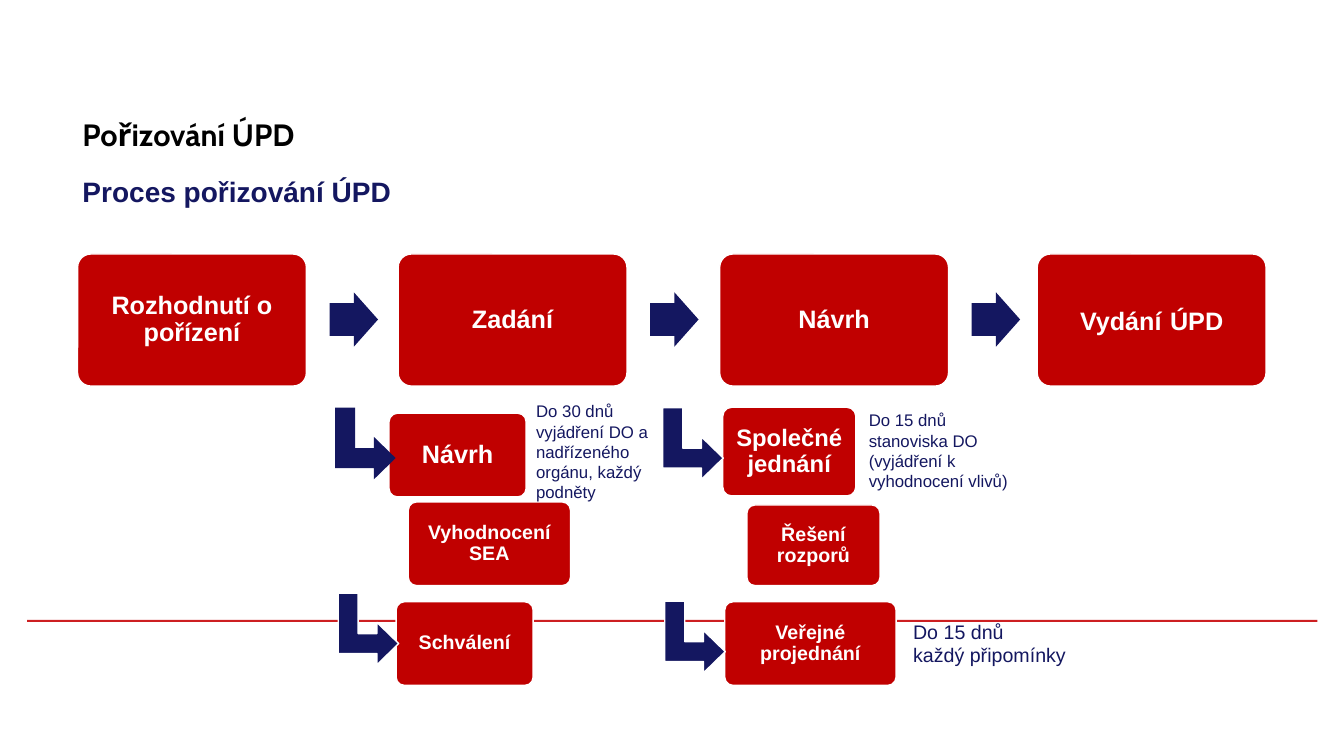
import pptx
import pptx.util
import pptx.dml.color
import pptx.enum.shapes
import pptx.enum.text

RED = pptx.dml.color.RGBColor(0xC0, 0x00, 0x00)
RULE_RED = pptx.dml.color.RGBColor(0xCD, 0x1F, 0x21)
NAVY = pptx.dml.color.RGBColor(0x14, 0x17, 0x60)
WHITE = pptx.dml.color.RGBColor(0xFF, 0xFF, 0xFF)
BLACK = pptx.dml.color.RGBColor(0x00, 0x00, 0x00)

SHAPE = pptx.enum.shapes.MSO_SHAPE
ANCHOR = pptx.enum.text.MSO_ANCHOR
CELL = pptx.util.Inches(0.1)
COLS, ROWS = 133.33, 75

STAGE_LEFTS = (7.7, 39.5, 71.4, 102.9)
STAGE_TOP, STAGE_W, STAGE_H = 25.2, 22.7, 13.1

ZADANI = {
    "steps": [
        ((-0.9, 15.8, 13.6, 8.3), "Návrh", 18),
        ((-0.2, 34.5, 13.6, 8.3), "Schválení", 14),
        ((1.0, 24.6, 16.1, 8.3), "Vyhodnocení SEA", 14),
    ],
    "bends": [((-6.8, 15.8), False), ((-6.5, 34.2), True)],
    "notes": [
        ((12.7, 14.1, 16.1, 11.1),
         ["Do 30 dnů vyjádření DO a nadřízeného orgánu, každý podněty"], 12),
    ],
}
NAVRH = {
    "steps": [
        ((0.3, 15.2, 13.2, 8.8), "Společné jednání", 17),
        ((0.5, 34.5, 17.0, 8.3), "Veřejné projednání", 14),
        ((2.7, 24.9, 13.2, 8.0), "Řešení rozporů", 14),
    ],
    "bends": [((-6.2, 15.8), True), ((-6.0, 35.0), True)],
    "notes": [
        ((13.8, 15.0, 16.1, 9.1),
         ["Do 15 dnů stanoviska DO (vyjádření k vyhodnocení vlivů)"], 12),
        ((18.2, 35.8, 18.5, 5.7), ["Do 15 dnů", "každý připomínky"], 14),
    ],
}


def cells(box):
    return [round(v * CELL) for v in box]


def style_run(r, size, color, bold=False, font="Arial"):
    r.font.name = font
    r.font.size = pptx.util.Pt(size)
    r.font.bold = bold
    r.font.color.rgb = color


def add_filled(slide, kind, box, color, outlined=False):
    sp = slide.shapes.add_shape(kind, *cells(box))
    sp.shadow.inherit = False
    sp.fill.solid()
    sp.fill.fore_color.rgb = color
    if outlined:
        sp.line.color.rgb = WHITE
        sp.line.width = pptx.util.Pt(1)
    else:
        sp.line.fill.background()
    return sp


def add_text(slide, box, lines, size, color, bold=False, font="Arial", anchor=ANCHOR.TOP):
    tf = slide.shapes.add_textbox(*cells(box)).text_frame
    tf.word_wrap = True
    tf.vertical_anchor = anchor
    tf.text = "\n".join(lines)
    for p in tf.paragraphs:
        for r in p.runs:
            style_run(r, size, color, bold, font)


def add_card(slide, box, text, size):
    sp = add_filled(slide, SHAPE.ROUNDED_RECTANGLE, box, RED, True)
    sp.adjustments[0] = 0.1
    tf = sp.text_frame
    tf.word_wrap = True
    tf.vertical_anchor = ANCHOR.MIDDLE
    margin = pptx.util.Inches(0.08)
    tf.margin_left = tf.margin_right = tf.margin_top = tf.margin_bottom = margin
    p = tf.paragraphs[0]
    p.text = text
    p.alignment = pptx.enum.text.PP_ALIGN.CENTER
    p.line_spacing = 0.9
    style_run(p.runs[0], size, WHITE, True)
    return p


def add_next_arrow(slide, box):
    left, top, _, _ = box
    sp = add_filled(slide, SHAPE.RIGHT_ARROW, (left + 25, top + 3.8, 4.8, 5.4), NAVY)
    sp.adjustments[0] = 0.6
    sp.adjustments[1] = 0.5


def add_bend(slide, left, top, outlined):
    sp = add_filled(slide, SHAPE.BENT_UP_ARROW, (left, top, 7.1, 6), NAVY, outlined)
    sp.rotation = 90
    for i, share in enumerate((0.33, 0.35, 0.36)):
        sp.adjustments[i] = share


def add_header(slide, box):
    left, top, width, height = box
    add_text(slide, (left, top, width, 9.8), ["Pořizování ÚPD"], 22, BLACK, True,
             "Cabin", ANCHOR.MIDDLE)
    add_text(slide, (left, top + 8.4, width, height - 8.4), ["Proces pořizování ÚPD"],
             20, NAVY, True)


def add_main_row(slide, boxes):
    for box, name in zip(boxes, ("Rozhodnutí o pořízení", "Zadání", "Návrh")):
        add_card(slide, box, name, 18)
        add_next_arrow(slide, box)
    p = add_card(slide, boxes[-1], "Vydání", 18)
    for text, size, bold, font in ((" ", 23, False, "Open Sans"), ("ÚPD", 18, True, "Arial")):
        r = p.add_run()
        r.text = text
        style_run(r, size, WHITE, bold, font)


def add_details(slide, box, details):
    left, top, _, _ = box
    for (x, y, w, h), text, size in details["steps"]:
        add_card(slide, (left + x, top + y, w, h), text, size)
    for (x, y), outlined in details["bends"]:
        add_bend(slide, left + x, top + y, outlined)
    for (x, y, w, h), lines, size in details["notes"]:
        add_text(slide, (left + x, top + y, w, h), lines, size, NAVY)


def main():
    prs = pptx.Presentation()
    prs.slide_width, prs.slide_height = cells((COLS, ROWS))
    slide = prs.slides.add_slide(prs.slide_layouts[6])
    stages = [(left, STAGE_TOP, STAGE_W, STAGE_H) for left in STAGE_LEFTS]
    add_filled(slide, SHAPE.RECTANGLE, (2.7, 61.5, 128, 0.2), RULE_RED)
    add_main_row(slide, stages)
    add_header(slide, (7.2, 8.4, 115, 12.8))
    add_details(slide, stages[1], ZADANI)
    add_details(slide, stages[2], NAVRH)
    prs.save("out.pptx")


if __name__ == "__main__":
    main()
